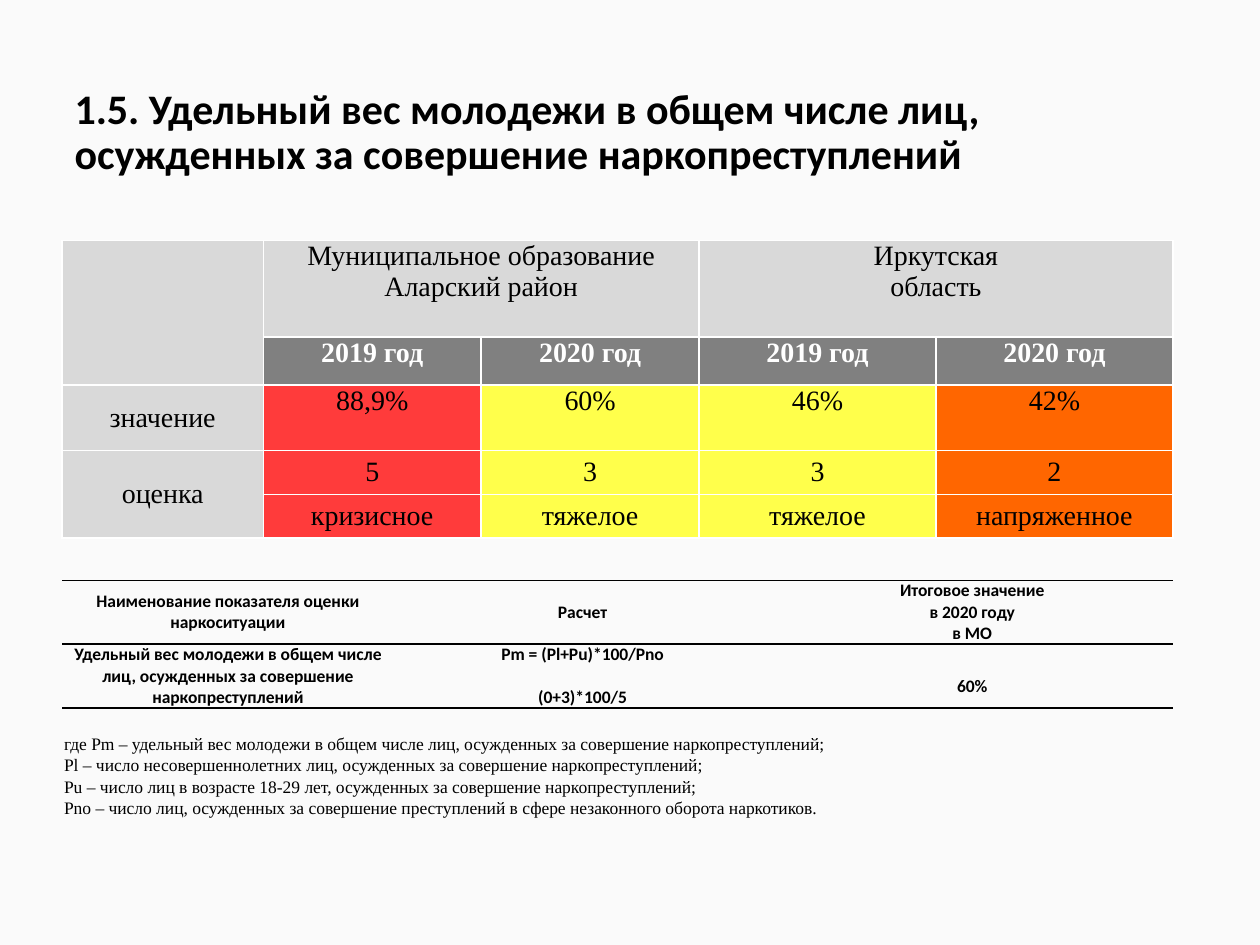
import dataclasses

import lxml.etree
import pptx
import pptx.dml.color
import pptx.enum.text
import pptx.oxml.ns
import pptx.util

Pt = pptx.util.Pt
ALIGN = pptx.enum.text.PP_ALIGN
ANCHOR = pptx.enum.text.MSO_ANCHOR
qn = pptx.oxml.ns.qn
PLAIN_TABLE_STYLE = "{2D5ABB26-0587-4C30-8999-92F81FD0307C}"


@dataclasses.dataclass(frozen=True)
class Theme:
    background: str = "FAFAFA"
    ink: str = "000000"
    white: str = "FFFFFF"
    label: str = "D9D9D9"
    year: str = "808080"
    crisis: str = "FF3B3B"
    severe: str = "FFFF4B"
    tense: str = "FF6600"
    heading_font: str = "Calibri"
    body_font: str = "Times New Roman"
    title_size: float = 24
    rating_size: float = 16
    small_size: float = 10


THEME = Theme()


def rgb(value):
    return pptx.dml.color.RGBColor.from_string(value)


def set_all(target, values):
    for name, value in values.items():
        setattr(target, name, value)


def write_lines(frame, lines, font, color=THEME.ink, indent=0, **paragraph_format):
    """Write one paragraph per line; font and paragraph_format hold attribute values."""
    for index, line in enumerate(lines):
        paragraph = frame.paragraphs[0] if index == 0 else frame.add_paragraph()
        if indent:
            paragraph._p.get_or_add_pPr().set("marL", str(Pt(indent)))
        set_all(paragraph, paragraph_format)
        run = paragraph.add_run()
        run.text = line
        set_all(run.font, font)
        run.font.color.rgb = rgb(color)


def add_text(slide, box, lines, font, anchor=ANCHOR.TOP, **text_format):
    frame = slide.shapes.add_textbox(*map(Pt, box)).text_frame
    set_all(frame, {"word_wrap": True, "vertical_anchor": anchor})
    write_lines(frame, lines, font, **text_format)


def add_plain_table(slide, left, top, widths, heights):
    box = map(Pt, (left, top, sum(widths), sum(heights)))
    table = slide.shapes.add_table(len(heights), len(widths), *box).table
    set_all(table, {"first_row": False, "horz_banding": False})
    table._tbl.tblPr.find(qn("a:tableStyleId")).text = PLAIN_TABLE_STYLE
    for column, width in zip(table.columns, widths):
        column.width = Pt(width)
    for row, height in zip(table.rows, heights):
        row.height = Pt(height)
    return table


def format_cell(cell, sides, line_color, fill=None, anchor=ANCHOR.MIDDLE):
    """Draw 1 pt borders on the sides (letters of LRTB), then fill and place the text."""
    properties = cell._tc.get_or_add_tcPr()
    for side in sides:
        line = lxml.etree.SubElement(properties, qn(f"a:ln{side}"), w=str(Pt(1)))
        solid = lxml.etree.SubElement(line, qn("a:solidFill"))
        lxml.etree.SubElement(solid, qn("a:srgbClr"), val=line_color)
    if fill:
        cell.fill.solid()
        cell.fill.fore_color.rgb = rgb(fill)
    else:
        cell.fill.background()
    set_all(cell, {"margin_left": Pt(5), "margin_right": Pt(5), "margin_top": 0,
                   "margin_bottom": 0, "vertical_anchor": anchor})


def add_rating_table(slide):
    rows = [
        ["", "Муниципальное образование Аларский район", "", "Иркутская\nобласть", ""],
        ["", "2019 год", "2020 год", "2019 год", "2020 год"],
        ["значение", "88,9%", "60%", "46%", "42%"],
        ["оценка", "5", "3", "3", "2"],
        ["", "кризисное", "тяжелое", "тяжелое", "напряженное"],
    ]
    rating_fills = [THEME.crisis, THEME.severe, THEME.severe, THEME.tense]
    data_fills = [[THEME.label] * 4, [THEME.year] * 4] + [rating_fills] * 3
    table = add_plain_table(slide, 35.5, 137.3, [115, 124.5, 124.5, 135.4, 135.4],
                            [55.4, 27.4, 37.4, 25, 25])
    for row, texts in enumerate(rows):
        for column, text in enumerate(texts):
            cell = table.cell(row, column)
            is_year = row == 1 and column > 0
            fill = data_fills[row][column - 1] if column else THEME.label
            anchor = ANCHOR.TOP if column and row < 3 else ANCHOR.MIDDLE
            format_cell(cell, "LRTB", THEME.white, fill, anchor)
            font = {"name": THEME.body_font, "size": Pt(THEME.rating_size), "bold": is_year}
            if text:
                write_lines(cell.text_frame, text.split("\n"), font,
                            THEME.white if is_year else THEME.ink, alignment=ALIGN.CENTER)
    for first, last in [((0, 0), (1, 0)), ((0, 1), (0, 2)), ((0, 3), (0, 4)), ((3, 0), (4, 0))]:
        table.cell(*first).merge(table.cell(*last))


def add_calculation_table(slide):
    rows = [
        ["Наименование показателя оценки наркоситуации", "Расчет",
         "Итоговое значение\nв 2020 году\nв МО"],
        ["Удельный вес молодежи в общем числе лиц, осужденных за совершение наркопреступлений",
         "Pm = (Pl+Pu)*100/Pnо\n(0+3)*100/5", "60%"],
    ]
    table = add_plain_table(slide, 35.5, 331.6, [189.4, 216, 229.4], [36.5, 36.5])
    font = {"name": THEME.heading_font, "size": Pt(THEME.small_size), "bold": True}
    for row, texts in enumerate(rows):
        for column, text in enumerate(texts):
            cell = table.cell(row, column)
            format_cell(cell, "TB", THEME.ink)
            write_lines(cell.text_frame, text.split("\n"), font, alignment=ALIGN.CENTER)
    formula, result = table.cell(1, 1), table.cell(1, 2)
    formula.text_frame.paragraphs[1].space_before = Pt(12)
    result.margin_top = Pt(12)


def main():
    presentation = pptx.Presentation()
    set_all(presentation, {"slide_width": Pt(720), "slide_height": Pt(540)})
    slide = presentation.slides.add_slide(presentation.slide_layouts[6])
    slide.background.fill.solid()
    slide.background.fill.fore_color.rgb = rgb(THEME.background)

    add_text(slide, (35.5, 25.9, 620.6, 100.8),
             ["1.5. Удельный вес молодежи в общем числе лиц, "
              "осужденных за совершение наркопреступлений"],
             {"name": THEME.heading_font, "size": Pt(THEME.title_size), "bold": True},
             ANCHOR.MIDDLE, line_spacing=0.9)
    add_rating_table(slide)
    add_calculation_table(slide)
    add_text(slide, (11.5, 415.6, 658.8, 55.4), [
        "где Pm – удельный вес молодежи в общем числе лиц, осужденных за совершение наркопреступлений;",
        "Pl – число несовершеннолетних лиц, осужденных за совершение наркопреступлений;",
        "Pu – число лиц в возрасте 18-29 лет, осужденных за совершение наркопреступлений;",
        "Pnо – число лиц, осужденных за совершение преступлений в сфере незаконного оборота наркотиков.",
    ], {"name": THEME.body_font, "size": Pt(THEME.small_size)}, indent=18, alignment=ALIGN.JUSTIFY)

    presentation.save("out.pptx")


if __name__ == "__main__":
    main()
